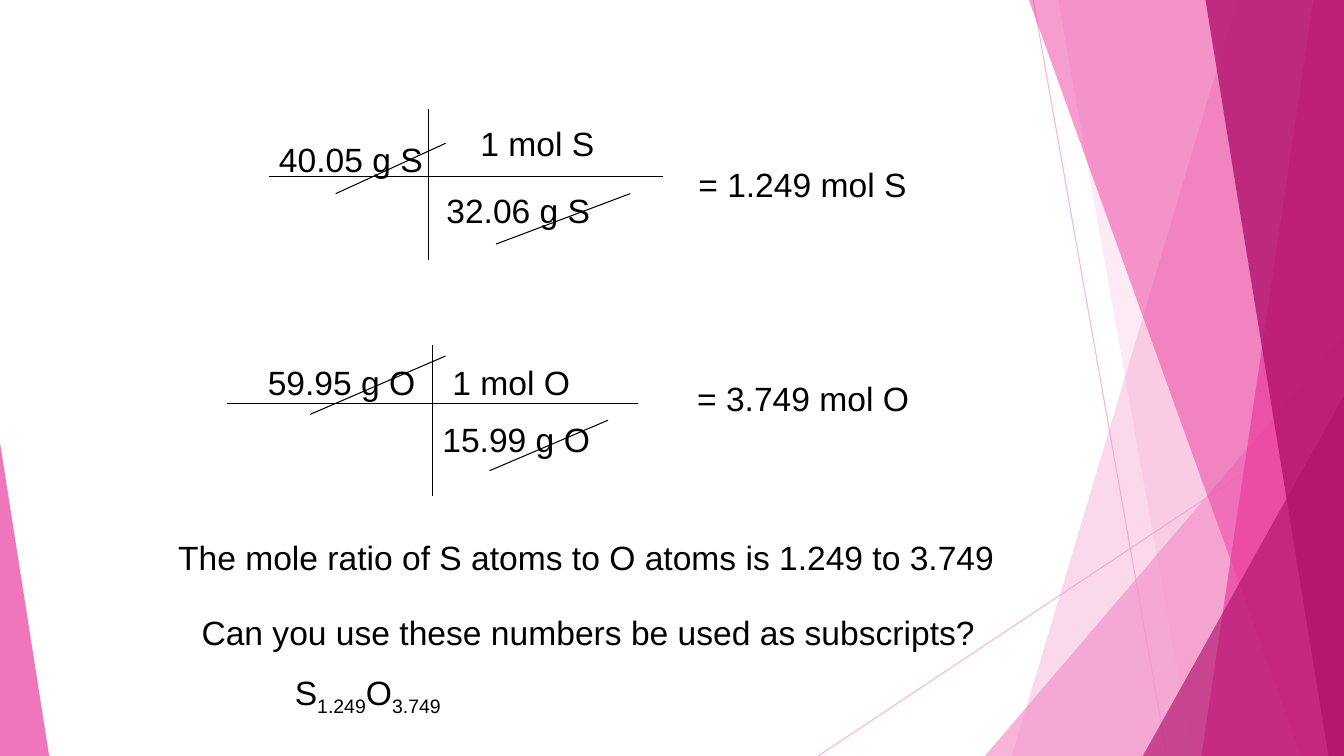
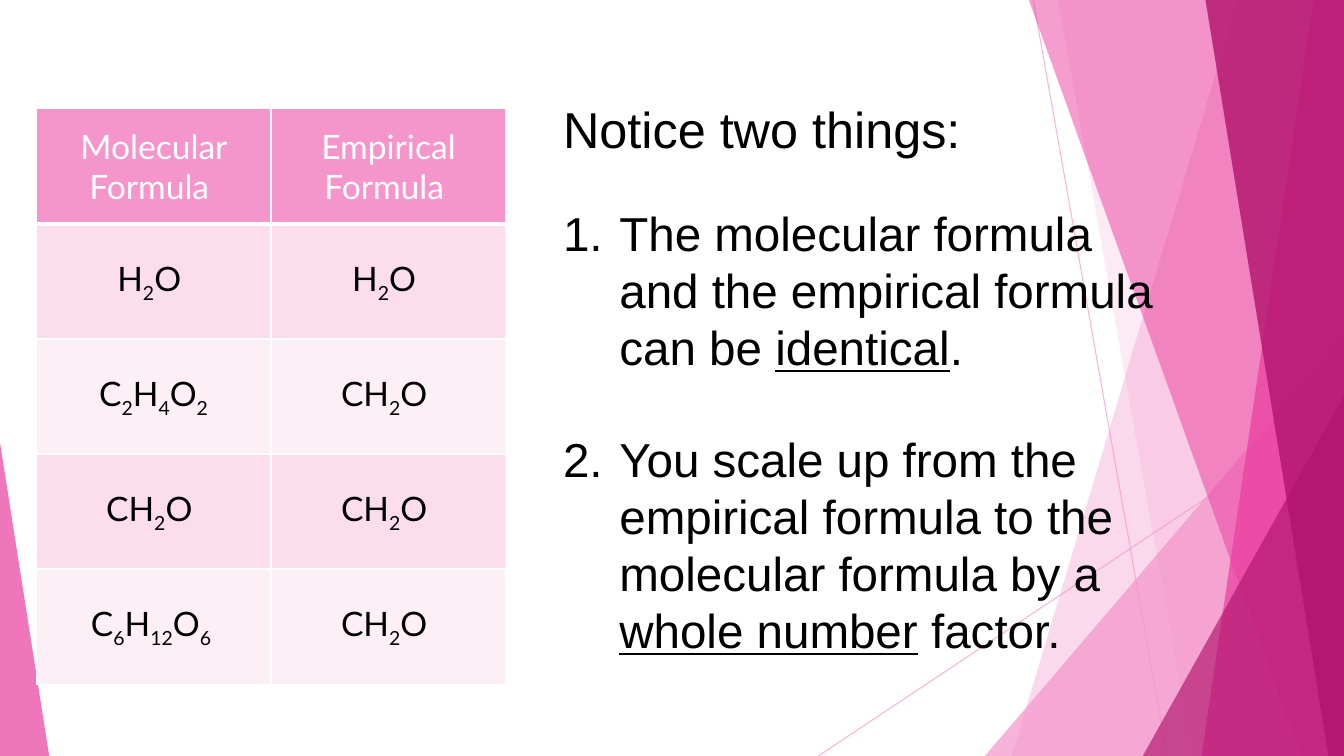
"""Build two chemistry slides on mole ratios and empirical formulas."""
from dataclasses import dataclass
from enum import Enum
from typing import Optional, Union

from lxml.etree import SubElement
from pptx import Presentation
from pptx.dml.color import RGBColor
from pptx.enum.shapes import MSO_CONNECTOR as Link, MSO_SHAPE as Preset
from pptx.enum.text import MSO_ANCHOR as Anchor, PP_ALIGN as Align
from pptx.oxml.ns import qn
from pptx.util import Cm, Pt

BLACK = RGBColor(0x00, 0x00, 0x00)
WHITE = RGBColor(0xFF, 0xFF, 0xFF)
LIGHT_PINK = RGBColor(0xF4, 0x96, 0xCB)
PINK = RGBColor(0xEB, 0x3D, 0x9F)
DARK_PINK = RGBColor(0xB2, 0x13, 0x6D)
ROW_TINT = RGBColor(0xFB, 0xDD, 0xEC)
ROW_PALE = RGBColor(0xFD, 0xEF, 0xF6)

SLIDE_WIDTH, SLIDE_HEIGHT = 33.87, 19.05
BODY_FONT, TABLE_FONT = "Arial", "Lato"
BODY_SIZE = 24
BLANK_LAYOUT = 6


class Accent(Enum):
    SUBSCRIPT = 1
    UNDERLINE = 2


@dataclass(frozen=True)
class Band:
    top_x: float
    bottom_x: float
    color: RGBColor
    alpha: int


@dataclass(frozen=True)
class Corner:
    left: float
    top: float
    width: float
    tip: float
    color: RGBColor
    alpha: int


@dataclass(frozen=True)
class Label:
    text: str
    left: float
    top: float
    width: float


@dataclass(frozen=True)
class Stroke:
    x1: float
    y1: float
    x2: float
    y2: float


BACKDROP_STROKES = [
    Stroke(26.04, 0, 29.41, SLIDE_HEIGHT),
    Stroke(SLIDE_WIDTH, 10.24, 20.62, SLIDE_HEIGHT),
]
BACKDROP_FACETS: list[Union[Band, Corner]] = [
    Band(31.19, 25.5, LIGHT_PINK, 36),
    Band(26.67, 30.05, LIGHT_PINK, 20),
    Corner(24.82, 8.46, 9.05, 1, LIGHT_PINK, 72),
    Band(25.93, 32.79, PINK, 50),
    Band(33.1, 30.28, PINK, 70),
    Band(30.38, 33.48, DARK_PINK, 80),
    Corner(28.8, 9.98, 5.07, 1, DARK_PINK, 66),
    Corner(0, 11.15, 1.24, 0, PINK, 70),
]
MOLE_LABELS = [
    Label("40.05 g S", 6.78, 3.38, 5),
    Label("32.06 g S", 11, 4.65, 6.35),
    Label("1 mol S", 11.86, 2.97, 4.24),
    Label("= 1.249 mol S", 17.35, 4.01, 6.78),
    Label("59.95 g O", 6.5, 8.99, 5.28),
    Label("15.99 g O", 10.9, 10.44, 5.51),
    Label("1 mol O", 11.15, 8.99, 5.72),
    Label("= 3.749 mol O", 17.32, 9.4, 6.35),
    Label("The mole ratio of S atoms to O atoms is 1.249 to 3.749", 4.24, 13.41, 23.06),
]
QUESTION = Label("Can you use these numbers be used as subscripts?", 4.83, 15.29, 20.96)
MOLE_STROKES = [
    Stroke(6.78, 4.45, 16.71, 4.45),
    Stroke(10.8, 2.74, 10.8, 6.55),
    Stroke(8.46, 4.88, 11.23, 3.61),
    Stroke(12.5, 6.15, 15.88, 4.88),
    Stroke(5.72, 10.16, 16.08, 10.16),
    Stroke(10.9, 8.69, 10.9, 12.5),
    Stroke(7.82, 10.44, 11.23, 8.97),
    Stroke(12.34, 11.86, 15.32, 10.59),
]
FORMULA_ROWS = [
    ("Molecular Formula ", "Empirical Formula "),
    ("H|2|O ", "H|2|O "),
    ("C|2|H|4|O|2", "CH|2|O "),
    ("CH|2|O ", "CH|2|O "),
    ("C|6|H|12|O|6 ", "CH|2|O "),
]
NOTICES = [
    ("The molecular formula and the empirical formula can be |identical|.", 32),
    ("You scale up from the empirical formula to the molecular formula by a "
     "|whole number| factor.", 39),
]


def write(para, text: str, *, size: float = BODY_SIZE, font: str = BODY_FONT,
          color: RGBColor = BLACK, accent: Accent = Accent.SUBSCRIPT,
          align: Optional[Align] = None, before: float = 0) -> None:
    """Write text into a paragraph, accenting every second part between bars."""
    para.alignment = align
    para.space_before = Pt(before)
    for index, part in enumerate(text.split("|")):
        if not part:
            continue
        span = para.add_run()
        span.text = part
        span.font.size = Pt(size)
        span.font.name = font
        span.font.color.rgb = color
        if index % 2 and accent is Accent.UNDERLINE:
            span.font.underline = True
        elif index % 2:
            span._r.get_or_add_rPr().set("baseline", "-25000")


def indent(para, left: float, first: float = 0) -> None:
    """Set the left margin and first-line indent in centimetres."""
    properties = para._p.get_or_add_pPr()
    properties.set("marL", str(Cm(left)))
    properties.set("indent", str(Cm(first)))


def add_box(page, left: float, top: float, width: float, height: float):
    """Add a wrapping text box and return its text frame."""
    frame = page.shapes.add_textbox(Cm(left), Cm(top), Cm(width), Cm(height)).text_frame
    frame.word_wrap = True
    return frame


def add_label(page, label: Label, height: float = 1.27):
    """Add a one-line label and return its text frame."""
    frame = add_box(page, label.left, label.top, label.width, height)
    write(frame.paragraphs[0], label.text)
    return frame


def set_alpha(shape, alpha: int) -> None:
    """Give the only colour of a shape an opacity in percent."""
    color = shape.element.spPr.find(".//" + qn("a:srgbClr"))
    SubElement(color, qn("a:alpha")).set("val", str(alpha * 1000))


def add_stroke(shapes, stroke: Stroke, color: RGBColor = BLACK):
    """Draw a thin straight line."""
    line = shapes.add_connector(Link.STRAIGHT, Cm(stroke.x1), Cm(stroke.y1),
                                Cm(stroke.x2), Cm(stroke.y2))
    line.line.color.rgb = color
    line.line.width = Pt(0.75)
    SubElement(line.element.spPr, qn("a:effectLst"))
    return line


def add_facet(shapes, facet: Union[Band, Corner]) -> None:
    """Draw one translucent facet of the backdrop."""
    if isinstance(facet, Band):
        builder = shapes.build_freeform(Cm(facet.top_x), Cm(0))
        builder.add_line_segments([
            (Cm(SLIDE_WIDTH), Cm(0)),
            (Cm(SLIDE_WIDTH), Cm(SLIDE_HEIGHT)),
            (Cm(facet.bottom_x), Cm(SLIDE_HEIGHT)),
        ])
        shape = builder.convert_to_shape()
    else:
        shape = shapes.add_shape(Preset.ISOSCELES_TRIANGLE, Cm(facet.left), Cm(facet.top),
                                 Cm(facet.width), Cm(SLIDE_HEIGHT - facet.top))
        shape.adjustments[0] = facet.tip
    shape.shadow.inherit = False
    shape.fill.solid()
    shape.fill.fore_color.rgb = facet.color
    shape.line.fill.background()
    set_alpha(shape, facet.alpha)


def add_backdrop(page) -> None:
    """Draw the shared backdrop and place it on the layout of the page."""
    group = page.shapes.add_group_shape()
    for stroke in BACKDROP_STROKES:
        set_alpha(add_stroke(group.shapes, stroke, LIGHT_PINK), 70)
    for facet in BACKDROP_FACETS:
        add_facet(group.shapes, facet)
    page.slide_layout.shapes.element.append(group.element)


def set_borders(cell, bottom: float) -> None:
    """Give a cell white borders, with its own width at the bottom."""
    properties = cell._tc.get_or_add_tcPr()
    for side, width in (("lnL", 1), ("lnR", 1), ("lnT", 1), ("lnB", bottom)):
        border = SubElement(properties, qn(f"a:{side}"))
        border.set("w", str(Pt(width)))
        fill = SubElement(border, qn("a:solidFill"))
        SubElement(fill, qn("a:srgbClr")).set("val", str(WHITE))


def add_formula_table(page) -> None:
    """Add the table of molecular and empirical formulas."""
    row_count, column_count = len(FORMULA_ROWS), len(FORMULA_ROWS[0])
    table = page.shapes.add_table(row_count, column_count, Cm(0.91), Cm(2.74),
                                  Cm(5.92 * column_count), Cm(2.9 * row_count)).table
    table.first_row = table.horz_banding = False
    for row, formulas in enumerate(FORMULA_ROWS):
        header = row == 0
        tint = LIGHT_PINK if header else ROW_TINT if row % 2 else ROW_PALE
        for column, formula in enumerate(formulas):
            cell = table.cell(row, column)
            set_borders(cell, 3 if header else 1)
            cell.fill.solid()
            cell.fill.fore_color.rgb = tint
            cell.vertical_anchor = Anchor.MIDDLE
            write(cell.text_frame.paragraphs[0], formula, font=TABLE_FONT,
                  color=WHITE if header else BLACK, align=Align.CENTER)


def fill_mole_page(page) -> None:
    """Show the conversion from grams to moles."""
    for label in MOLE_LABELS:
        add_label(page, label)
    formula = add_label(page, QUESTION, height=2.8).add_paragraph()
    write(formula, "S|1.249|O|3.749|", before=14)
    indent(formula, 2.35)
    for stroke in MOLE_STROKES:
        add_stroke(page.shapes, stroke)


def fill_formula_page(page) -> None:
    """Compare the two kinds of formula and list what to notice."""
    add_formula_table(page)
    frame = add_box(page, 13.94, 2.36, 15.9, 16.33)
    write(frame.paragraphs[0], "Notice two things:", size=36)
    for text, before in NOTICES:
        para = frame.add_paragraph()
        write(para, text, size=34, accent=Accent.UNDERLINE, before=before)
        indent(para, 1.42, -1.42)
        SubElement(para._p.get_or_add_pPr(), qn("a:buAutoNum")).set("type", "arabicPeriod")


def main() -> None:
    """Build and save the deck."""
    deck = Presentation()
    deck.slide_width, deck.slide_height = Cm(SLIDE_WIDTH), Cm(SLIDE_HEIGHT)
    layout = deck.slide_layouts[BLANK_LAYOUT]
    mole_page, formula_page = (deck.slides.add_slide(layout) for _ in range(2))
    add_backdrop(mole_page)
    fill_mole_page(mole_page)
    fill_formula_page(formula_page)
    deck.save("out.pptx")


if __name__ == "__main__":
    main()
